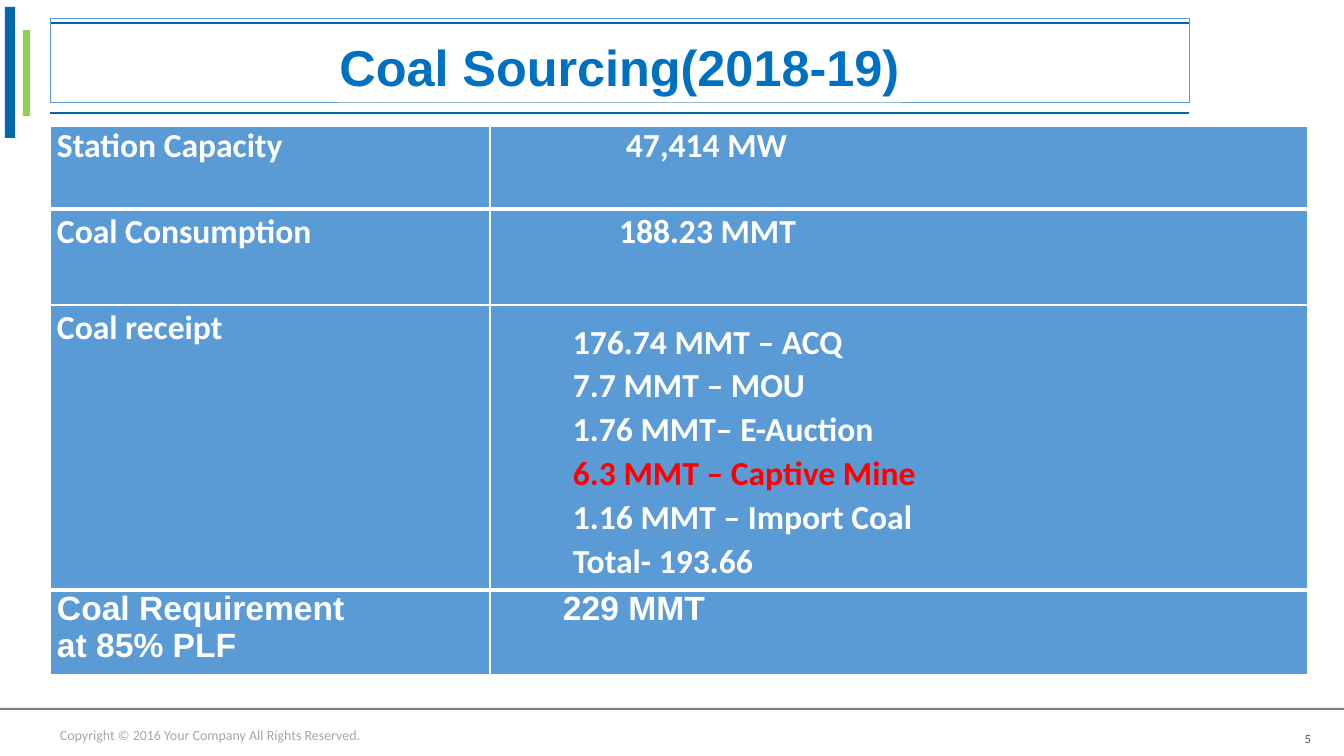
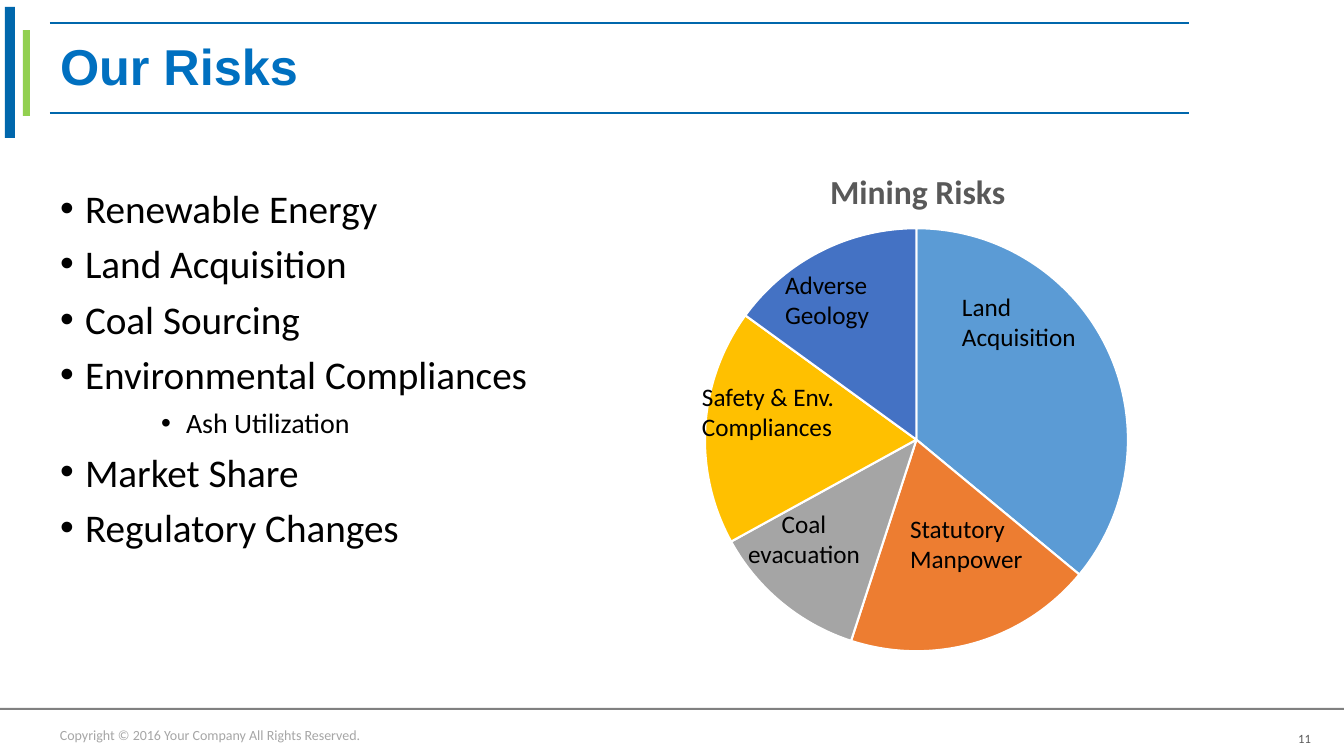
from lxml import etree
from pptx import Presentation
from pptx.chart.data import CategoryChartData
from pptx.dml.color import RGBColor
from pptx.enum.chart import XL_CHART_TYPE
from pptx.enum.shapes import MSO_CONNECTOR, MSO_SHAPE
from pptx.enum.text import MSO_ANCHOR, PP_ALIGN
from pptx.oxml.ns import qn
from pptx.util import Emu, Pt

SLIDE_WIDTH, SLIDE_HEIGHT = 1344, 756
EMU_PER_PX = 914400 / 100.8

BLUE, GREEN, TITLE_BLUE = "0067AC", "92D050", "0070C0"
TABLE_BLUE, WHITE, BLACK, RED = "5B9BD5", "FFFFFF", "000000", "FF0000"
RULE_GREY, COPYRIGHT_GREY, TEXT_GREY = "808080", "A6A6A6", "595959"
BODY_FONT, TITLE_FONT = "Calibri", "Arial"
INSETS = (10, 5, 10, 5)
LEFT = 50
TITLE_WIDTH = 1139

# Table rows: height, label lines, label font, value indent, value lines, line spacing
COAL_ROWS = [
    (83, ["Station Capacity"], BODY_FONT, 136, ["47,414 MW"], 1),
    (96, ["Coal Consumption"], BODY_FONT, 129, ["188.23 MMT"], 1.07),
    (285, ["Coal receipt"], BODY_FONT, 83,
     ["176.74 MMT – ACQ", "7.7 MMT – MOU", "1.76 MMT– E-Auction",
      "6.3 MMT – Captive Mine", "1.16 MMT – Import Coal", "Total- 193.66"], 1.07),
    (85, ["Coal Requirement", "at 85% PLF"], TITLE_FONT, 73, ["229 MMT"], 1),
]
COLUMN_WIDTHS = (440, 818)
ROW_BORDERS = (1, 3, 1, 3, 1)

RISKS = [
    ("Renewable Energy", 0), ("Land Acquisition", 0), ("Coal Sourcing", 0),
    ("Environmental Compliances", 0), ("Ash Utilization", 2),
    ("Market Share", 0), ("Regulatory Changes", 0),
]
PIE_SLICES = [(36, "5B9BD5"), (19, "ED7D31"), (12, "A5A5A5"), (18, "FFC000"), (15, "4472C4")]
PIE_LABELS = [
    ("Adverse Geology", 775, 264, PP_ALIGN.LEFT),
    ("Coal evacuation", 726, 503, PP_ALIGN.CENTER),
    ("Statutory Manpower", 900, 508, PP_ALIGN.LEFT),
    ("Safety & Env. Compliances", 692, 376, PP_ALIGN.LEFT),
    ("Land Acquisition", 952, 286, PP_ALIGN.LEFT),
]


def px(value):
    return Emu(round(value * EMU_PER_PX))


def box(*lengths):
    return [px(length) for length in lengths]


def color(hex_value):
    return RGBColor.from_string(hex_value)


def style(paragraph, size, hex_value, name=BODY_FONT, bold=False):
    font = paragraph.font
    font.size, font.name, font.bold = Pt(size), name, bold
    font.color.rgb = color(hex_value)


def set_indent(paragraph, left, first=0):
    properties = paragraph._p.get_or_add_pPr()
    properties.set("marL", str(px(left)))
    properties.set("indent", str(px(first)))


def add_lines(frame, lines):
    """Fill a text frame and return its paragraphs."""
    frame.text = "\n".join(lines)
    return frame.paragraphs


def add_text(slide, lines, place, anchor=MSO_ANCHOR.TOP, insets=INSETS):
    shape = slide.shapes.add_textbox(*box(*place))
    frame = shape.text_frame
    frame.word_wrap = True
    frame.vertical_anchor = anchor
    (frame.margin_left, frame.margin_top,
     frame.margin_right, frame.margin_bottom) = box(*insets)
    return shape, add_lines(frame, lines)


def add_bar(slide, place, fill):
    shape = slide.shapes.add_shape(MSO_SHAPE.RECTANGLE, *box(*place))
    shape.shadow.inherit = False
    shape.fill.solid()
    shape.fill.fore_color.rgb = color(fill)
    shape.line.fill.background()


def add_rule(slide, y):
    line = slide.shapes.add_connector(
        MSO_CONNECTOR.STRAIGHT, *box(LEFT, y, LEFT + TITLE_WIDTH, y))
    line.line.color.rgb = color(BLUE)
    line.line.width = Pt(1.5)
    etree.SubElement(line._element.spPr, qn("a:effectLst"))


def add_base_slide(presentation, number):
    """Add a slide with the shared bars, rules and footer."""
    slide = presentation.slides.add_slide(presentation.slide_layouts[6])
    add_bar(slide, (23, 30, 7, 86), GREEN)
    add_bar(slide, (5, 7, 10, 131), BLUE)
    for y in (113, 23):
        add_rule(slide, y)
    add_bar(slide, (0, 708, SLIDE_WIDTH, 2), RULE_GREY)
    _, paragraphs = add_text(slide, ["Copyright © 2016 Your Company All Rights Reserved."],
                             (LEFT, 721, 1262, 27), MSO_ANCHOR.MIDDLE)
    style(paragraphs[0], 10, COPYRIGHT_GREY)
    _, paragraphs = add_text(slide, [str(number)], (1256, 723, 55, 25), insets=(8, 8, 0, 0))
    paragraphs[0].alignment = PP_ALIGN.RIGHT
    style(paragraphs[0], 9, TEXT_GREY)
    return slide


def add_title(slide, text, top, height, anchor):
    shape, paragraphs = add_text(slide, [text], (LEFT, top, TITLE_WIDTH, height), anchor)
    style(paragraphs[0], 36, TITLE_BLUE, TITLE_FONT, True)
    return shape, paragraphs[0]


def set_borders(cell, top, bottom):
    properties = cell._tc.get_or_add_tcPr()
    for side, width in (("L", 1), ("R", 1), ("T", top), ("B", bottom)):
        line = etree.SubElement(properties, qn(f"a:ln{side}"), w=str(Pt(width)))
        fill = etree.SubElement(line, qn("a:solidFill"))
        etree.SubElement(fill, qn("a:srgbClr"), val=WHITE)


def fill_cell(cell, lines, font_name, indent, spacing):
    cell.margin_left = cell.margin_right = cell.margin_top = cell.margin_bottom = 0
    cell.fill.solid()
    cell.fill.fore_color.rgb = color(TABLE_BLUE)
    for paragraph in add_lines(cell.text_frame, lines):
        set_indent(paragraph, indent)
        paragraph.line_spacing = spacing
        style(paragraph, 24, RED if "Captive" in paragraph.text else WHITE, font_name, True)


def add_coal_table(slide):
    height = sum(row[0] for row in COAL_ROWS)
    table = slide.shapes.add_table(len(COAL_ROWS), len(COLUMN_WIDTHS), *box(
        LEFT, 126, sum(COLUMN_WIDTHS), height)).table
    table.first_row = table.horz_banding = False
    for column, width in zip(table.columns, COLUMN_WIDTHS):
        column.width = px(width)
    for index, (height, label, font_name, indent, values, spacing) in enumerate(COAL_ROWS):
        table.rows[index].height = px(height)
        for column, (lines, left) in enumerate(((label, 7), (values, indent))):
            cell = table.cell(index, column)
            set_borders(cell, *ROW_BORDERS[index:index + 2])
            fill_cell(cell, lines, font_name, left, spacing)
    # The list of receipts starts lower in its cell
    table.cell(2, 1).text_frame.paragraphs[0].line_spacing = 1.42


def add_risk_list(slide):
    _, paragraphs = add_text(slide, [text for text, _ in RISKS], (LEFT, 179, 597, 531))
    for index, (paragraph, (_, level)) in enumerate(zip(paragraphs, RISKS)):
        paragraph.level = level
        set_indent(paragraph, 126 if level else 25, -25)
        properties = paragraph._p.get_or_add_pPr()
        etree.SubElement(properties, qn("a:buFont"), typeface="Arial")
        etree.SubElement(properties, qn("a:buChar"), char="•")
        if index:
            paragraph.space_before = Pt(6)
        style(paragraph, 20 if level else 28, BLACK)


def set_layout(parent, index, **values):
    """Place a chart part by fractions of the chart area."""
    for old in parent.findall(qn("c:layout")):
        parent.remove(old)
    layout = etree.Element(qn("c:layout"))
    manual = etree.SubElement(layout, qn("c:manualLayout"))
    if "w" in values:
        etree.SubElement(manual, qn("c:layoutTarget"), val="inner")
    for axis in ("x", "y"):
        etree.SubElement(manual, qn(f"c:{axis}Mode"), val="edge")
    for key, value in values.items():
        etree.SubElement(manual, qn(f"c:{key}"), val=str(value))
    parent.insert(index, layout)


def add_risk_chart(slide):
    data = CategoryChartData()
    data.categories = [str(index + 1) for index in range(len(PIE_SLICES))]
    data.add_series("Series 1", [value for value, _ in PIE_SLICES])
    chart = slide.shapes.add_chart(XL_CHART_TYPE.PIE, *box(586, 136, 661, 533), data).chart
    chart.has_legend = False
    chart.font.size, chart.font.name = Pt(10), BODY_FONT
    chart.font.color.rgb = color(BLACK)

    # Title and plot area
    chart.has_title = True
    title = chart.chart_title
    style(add_lines(title.text_frame, ["Mining Risks"])[0], 24, TEXT_GREY, bold=True)
    title_element = chart.element.find(f".//{qn('c:title')}")
    set_layout(title_element, 1, x=0.36, y=0.05)
    plot_area = chart.element.find(f".//{qn('c:plotArea')}")
    set_layout(plot_area, 0, x=0.18, y=0.17, w=0.64, h=0.8)

    # Slices
    plot = chart.plots[0]
    plot.vary_by_categories = True
    for index, (_, fill) in enumerate(PIE_SLICES):
        slice_format = plot.series[0].points[index].format
        slice_format.fill.solid()
        slice_format.fill.fore_color.rgb = color(fill)
        slice_format.line.color.rgb = color(WHITE)
        slice_format.line.width = Pt(1.5)


def add_pie_label(slide, text, left, top, alignment):
    _, paragraphs = add_text(slide, [text], (left, top, 156, 72))
    paragraphs[0].alignment = alignment
    style(paragraphs[0], 18, BLACK)


def build_sourcing_slide(presentation):
    slide = add_base_slide(presentation, 5)
    shape, paragraph = add_title(slide, "Coal Sourcing(2018-19)", 18, 84, MSO_ANCHOR.BOTTOM)
    shape.line.color.rgb = color(TABLE_BLUE)
    shape.line.width = Pt(0.5)
    paragraph.alignment = PP_ALIGN.CENTER
    paragraph.line_spacing = Pt(40)
    add_coal_table(slide)


def build_risks_slide(presentation):
    slide = add_base_slide(presentation, 11)
    _, paragraph = add_title(slide, "Our Risks", 30, 78, MSO_ANCHOR.MIDDLE)
    paragraph.line_spacing = 0.9
    add_risk_list(slide)
    add_risk_chart(slide)
    for label in PIE_LABELS:
        add_pie_label(slide, *label)


def main():
    presentation = Presentation()
    presentation.slide_width, presentation.slide_height = box(SLIDE_WIDTH, SLIDE_HEIGHT)
    build_sourcing_slide(presentation)
    build_risks_slide(presentation)
    presentation.save("out.pptx")


if __name__ == "__main__":
    main()
